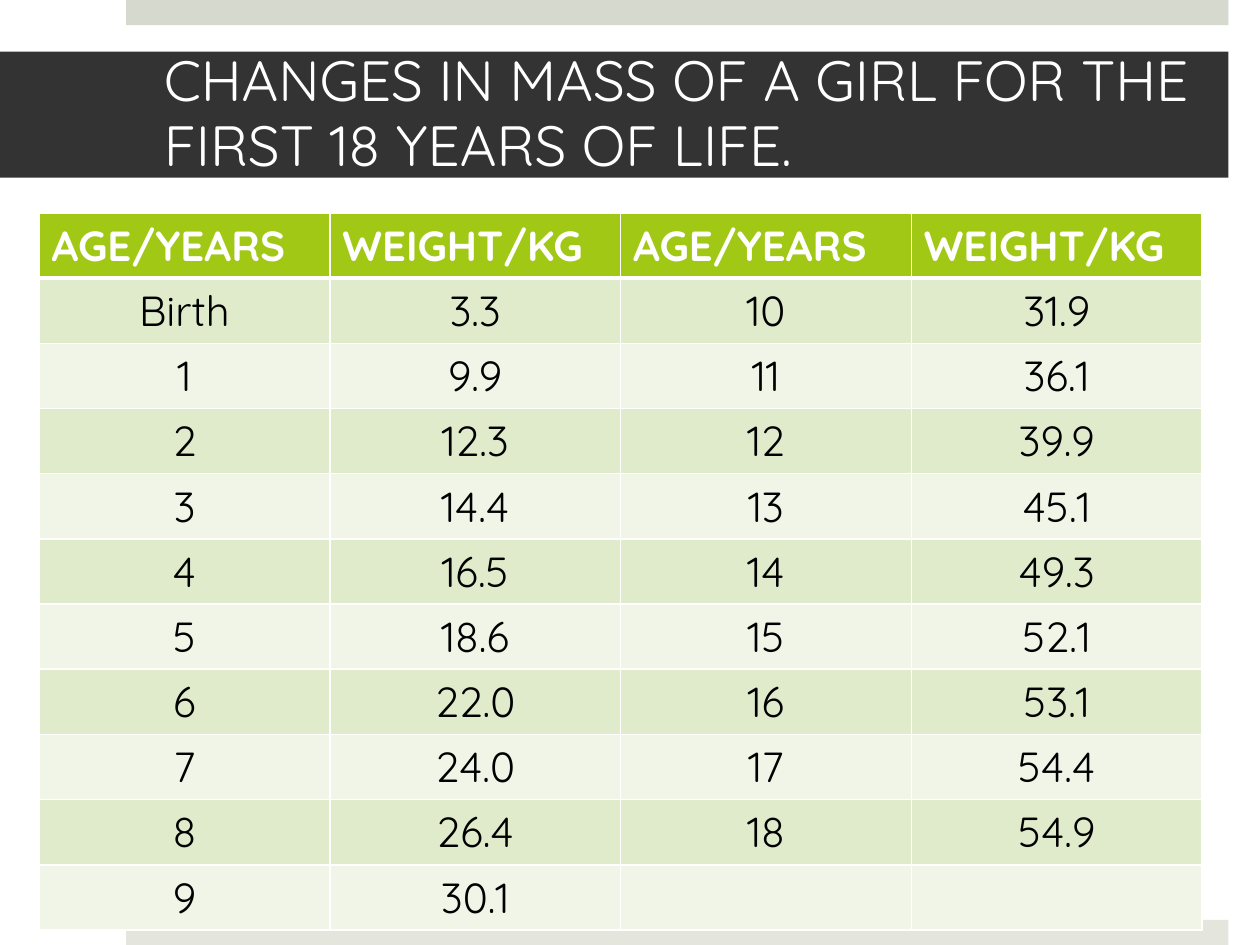
from lxml.etree import SubElement
from pptx import Presentation
from pptx.dml.color import RGBColor as Color
from pptx.enum.shapes import MSO_SHAPE as Preset
from pptx.enum.text import MSO_ANCHOR as Anchor, PP_ALIGN as Align
from pptx.oxml.ns import qn
from pptx.util import Inches, Pt

COLORS = {
    "top_bar": "D6D9CD",
    "bottom_bar": "E4E6DE",
    "banner": "333333",
    "header": "A2C816",
    "odd_row": "E0EBCC",
    "even_row": "F0F5E8",
    "white": "FFFFFF",
    "black": "000000",
}
FONT = "Quicksand"
WIDTH, HEIGHT = 10, 7.5
TITLE = "CHANGES IN MASS OF A GIRL FOR THE FIRST 18 YEARS OF LIFE."
HEADERS = ["AGE/YEARS", "WEIGHT/KG"] * 2
AGES = ["Birth"] + [str(age) for age in range(1, 19)]
WEIGHTS = [
    "3.3", "9.9", "12.3", "14.4", "16.5", "18.6", "22.0", "24.0", "26.4", "30.1",
    "31.9", "36.1", "39.9", "45.1", "49.3", "52.1", "53.1", "54.4", "54.9",
]
BODY_ROWS = 10


def color(name):
    """Return the named palette color."""
    return Color.from_string(COLORS[name])


def add_text(paragraph, text, size, color_name, bold=False):
    """Add one styled run to a paragraph."""
    run = paragraph.add_run()
    run.text = text
    run.font.name = FONT
    run.font.size = Pt(size)
    run.font.bold = bold
    run.font.color.rgb = color(color_name)


def add_bar(slide, box, color_name):
    """Place a plain filled rectangle in the box."""
    shape = slide.shapes.add_shape(Preset.RECTANGLE, *map(Inches, box))
    shape.shadow.inherit = False
    shape.fill.solid()
    shape.fill.fore_color.rgb = color(color_name)
    shape.line.fill.background()
    return shape


def add_banner(slide, box):
    """Place the dark title banner in the box."""
    frame = add_bar(slide, box, "banner").text_frame
    frame.word_wrap = True
    frame.vertical_anchor = Anchor.MIDDLE
    frame.margin_left, frame.margin_right = Inches(1.3), Inches(0.3)
    frame.margin_top = frame.margin_bottom = Inches(0.05)
    paragraph = frame.paragraphs[0]
    paragraph.alignment = Align.LEFT
    paragraph.line_spacing = 0.96
    add_text(paragraph, TITLE, 32.4, "white")


def add_borders(cell, bottom_width):
    """Draw white borders on all four sides of a cell."""
    properties = cell._tc.get_or_add_tcPr()
    for side, width in zip("LRTB", (1, 1, 1, bottom_width)):
        line = SubElement(properties, qn(f"a:ln{side}"), w=str(Pt(width)))
        fill = SubElement(line, qn("a:solidFill"))
        SubElement(fill, qn("a:srgbClr"), val=COLORS["white"])


def mass_rows():
    """Return the body rows, with the ages split over two column pairs."""
    pairs = list(zip(AGES, WEIGHTS))
    right = pairs[BODY_ROWS:] + [("", "")]
    return [first + second for first, second in zip(pairs[:BODY_ROWS], right)]


def add_mass_table(slide, box):
    """Place the age and weight table in the box."""
    rows = [HEADERS] + mass_rows()
    frame = slide.shapes.add_table(len(rows), len(HEADERS), *map(Inches, box))
    table = frame.table
    for row_index, row in enumerate(rows):
        is_header = row_index == 0
        band = "header" if is_header else "odd_row" if row_index % 2 else "even_row"
        for column_index, text in enumerate(row):
            cell = table.cell(row_index, column_index)
            add_borders(cell, 3 if is_header else 1)
            cell.fill.solid()
            cell.fill.fore_color.rgb = color(band)
            paragraph = cell.text_frame.paragraphs[0]
            paragraph.alignment = Align.LEFT if is_header else Align.CENTER
            if text:
                add_text(paragraph, text, 24, "white" if is_header else "black", is_header)


def main():
    """Build and save the slide."""
    presentation = Presentation()
    presentation.slide_width, presentation.slide_height = Inches(WIDTH), Inches(HEIGHT)
    slide = presentation.slides.add_slide(presentation.slide_layouts[6])
    bar_left, bar_width, bar_height = WIDTH * 0.1, WIDTH * 0.875, 0.2
    add_bar(slide, (bar_left, 0, bar_width, bar_height), "top_bar")
    add_bar(slide, (bar_left, HEIGHT - bar_height, bar_width, bar_height), "bottom_bar")
    add_banner(slide, (0, 0.41, bar_left + bar_width, 1))
    add_mass_table(slide, (0.31, 1.69, 9.23, 5.5))
    presentation.save("out.pptx")


if __name__ == "__main__":
    main()
